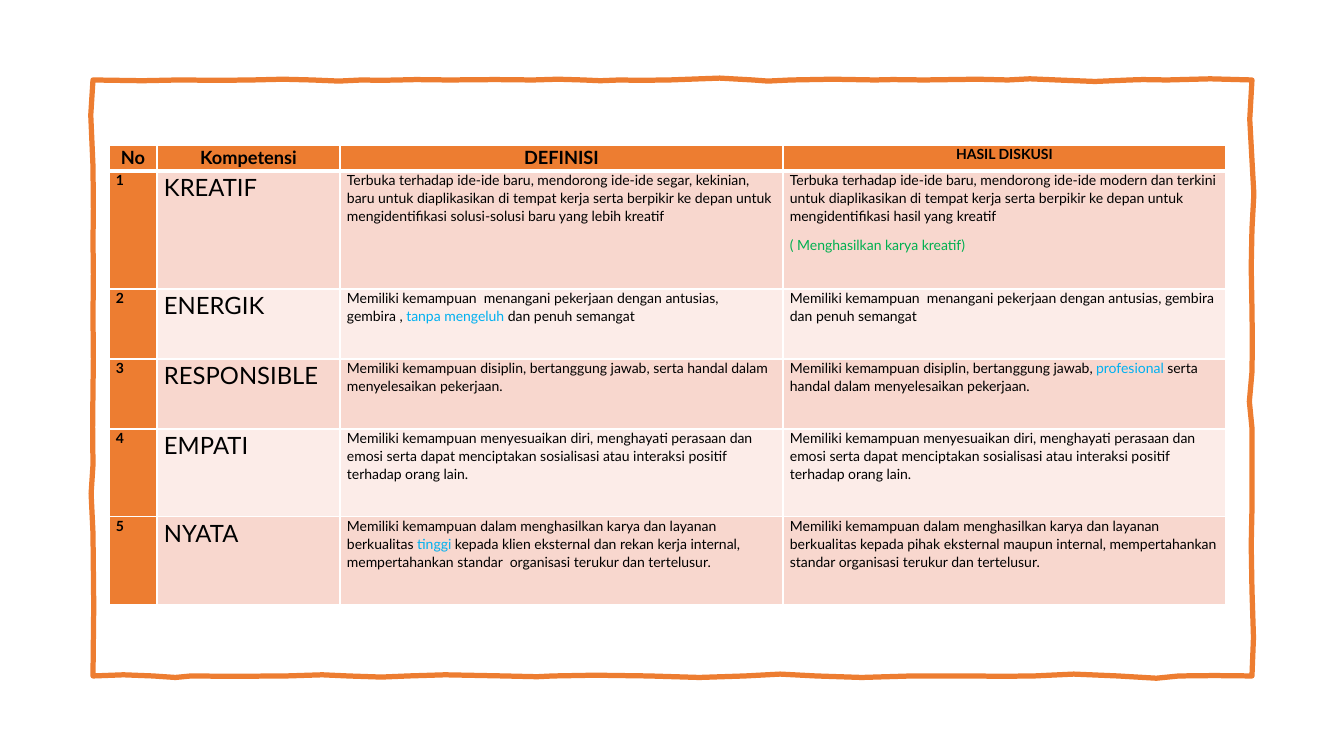
from lxml import etree
from pptx import Presentation
from pptx import util as u
from pptx.dml.color import RGBColor
from pptx.enum import text
from pptx.oxml.ns import qn

HEAD = ["No", "Kompetensi", "DEFINISI", "HASIL DISKUSI"]
EMPATHY = ("Memiliki kemampuan menyesuaikan diri, menghayati perasaan dan emosi serta dapat "
           "menciptakan sosialisasi atau interaksi positif terhadap orang lain.")
ROWS = [
    ("KREATIF",
     [[("Terbuka terhadap ide-ide baru, mendorong ide-ide segar, kekinian, baru untuk "
        "diaplikasikan di tempat kerja serta berpikir ke depan untuk mengidentifikasi "
        "solusi-solusi baru yang lebih kreatif", "ink")]],
     [[("Terbuka terhadap ide-ide baru, mendorong ide-ide modern dan terkini untuk "
        "diaplikasikan di tempat kerja serta berpikir ke depan untuk mengidentifikasi "
        "hasil yang kreatif", "ink")],
      [("( Menghasilkan karya kreatif)", "green")]]),
    ("ENERGIK",
     [[("Memiliki kemampuan  menangani pekerjaan dengan antusias, gembira , ", "ink"),
       ("tanpa mengeluh ", "blue"), ("dan penuh semangat", "ink")]],
     [[("Memiliki kemampuan  menangani pekerjaan dengan antusias, gembira dan penuh "
        "semangat", "ink")]]),
    ("RESPONSIBLE",
     [[("Memiliki kemampuan disiplin, bertanggung jawab, serta handal dalam "
        "menyelesaikan pekerjaan.", "ink")]],
     [[("Memiliki kemampuan disiplin, bertanggung jawab, ", "ink"),
       ("profesional ", "blue"), ("serta handal dalam menyelesaikan pekerjaan.", "ink")]]),
    ("EMPATI", [[(EMPATHY, "ink")]], [[(EMPATHY, "ink")]]),
    ("NYATA",
     [[("Memiliki kemampuan dalam menghasilkan karya dan layanan berkualitas", "ink"),
       (" tinggi", "blue"),
       (" kepada klien eksternal dan rekan kerja internal, mempertahankan standar  "
        "organisasi terukur dan tertelusur.", "ink")]],
     [[("Memiliki kemampuan dalam menghasilkan karya dan layanan berkualitas kepada pihak "
        "eksternal maupun internal, mempertahankan standar organisasi terukur dan "
        "tertelusur.", "ink")]]),
]

THEME = {
    "font": "Lato", "ink": "000000", "green": "00B050", "blue": "00B0F0",
    "main": "ED7D31", "rule": "FFFFFF", "bands": ("F8D7CE", "FCECE8"),
    "head": 13, "name": 17, "body": 10, "frame": 3.75, "thin": 1, "thick": 3,
}
PX = 914400 / 100.8
PAGE = (1344, 756)
SPOT = (109, 145)
COLS = (48, 183, 443, 443)
TALL = (26, 118, 70, 70, 88, 88)
PAD = 7
STEPS = 2

LEFT, TOP, RIGHT, BASE = 93, 80, 1252, 676
BOTTOM_WAVES = [
    (118, -1, 129, -2, 153), (177, 2, 176, 2, 191), (206, -1, 251, 2, 286),
    (322, -2, 326, -1, 348), (370, 1, 395, 2, 408), (421, -2, 462, -1, 504),
    (546, 1, 534, 1, 553), (572, 0, 614, -2, 649), (683, 2, 717, 2, 745),
    (772, -2, 788, -3, 816), (846, 3, 876, 1, 912), (950, -1, 958, 1, 974),
    (990, -1, 1006, 2, 1034), (1062, -2, 1084, -3, 1118), (1152, 3, 1166, 3, 1179),
    (1192, -2, 1236, 1, RIGHT)]
RIGHT_WAVES = [
    (655, 1, 623, 3, 590), (557, -4, 530, 2, 509), (488, -3, 446, 3, 428),
    (412, -4, 392, -3, 372), (352, 2, 335, -1, 309), (284, 0, 249, -2, 229),
    (209, 2, 179, 3, 160), (140, -4, 98, -2, TOP)]
TOP_WAVES = [
    (1222, -3, 1199, 0, 1167), (1137, 0, 1145, -1, 1130), (1114, 1, 1077, 3, 1057),
    (1038, -4, 1020, 1, 1008), (997, -1, 965, -1, 924), (884, -1, 897, 0, 875),
    (852, 0, 813, -2, 791), (768, 2, 765, 1, 753), (741, -2, 704, -3, 669),
    (634, 2, 639, -1, 620), (600, 1, 600, 1, 583), (564, -1, 552, -1, 533),
    (513, 1, 480, -2, 449), (417, 1, 410, -2, 399), (389, 2, 371, -1, 362),
    (354, 1, 325, 2, 312), (300, -2, 266, 0, 252), (238, -1, 202, 2, 179),
    (157, -2, 132, 4, LEFT)]
LEFT_WAVES = [
    (101, -3, 124, -3, 166), (208, 3, 214, -2, 241), (267, 1, 278, 0, 316),
    (352, 0, 370, 1, 390), (410, -2, 444, 1, 465), (484, -2, 500, -3, 533),
    (567, 2, 646, 0, BASE)]
SIDES = [(BASE, LEFT, True, BOTTOM_WAVES), (RIGHT, BASE, False, RIGHT_WAVES),
         (TOP, RIGHT, True, TOP_WAVES), (LEFT, TOP, False, LEFT_WAVES)]


def emu(px):
    return round(px * PX)


def rgb(name):
    return RGBColor.from_string(THEME.get(name, name))


def trace():
    for line, at, flat, waves in SIDES:
        for a, p, b, q, end in waves:
            for step in range(1, STEPS + 1):
                t = step / STEPS
                s = 1 - t
                along = s**3 * at + 3 * s * s * t * a + 3 * s * t * t * b + t**3 * end
                off = line + 3 * s * s * t * p + 3 * s * t * t * q
                yield (emu(along), emu(off)) if flat else (emu(off), emu(along))
            at = end


def draw_frame(slide):
    pen = slide.shapes.build_freeform(emu(LEFT), emu(BASE))
    pen.add_line_segments(list(trace())[:-1], close=True)
    frame = pen.convert_to_shape()
    frame.shadow.inherit = False
    frame.fill.background()
    frame.line.color.rgb = rgb("main")
    frame.line.width = u.Pt(THEME["frame"])


def rule(cell, base):
    props = cell._tc.get_or_add_tcPr()
    widths = {"a:lnL": "thin", "a:lnR": "thin", "a:lnT": "thin", "a:lnB": base}
    for spot, (tag, width) in enumerate(widths.items()):
        line = etree.Element(qn(tag), w=str(u.Pt(THEME[width])))
        fill = etree.SubElement(line, qn("a:solidFill"))
        etree.SubElement(fill, qn("a:srgbClr"), val=THEME["rule"])
        props.insert(spot, line)


def fill_cell(cell, paras, size, bold, back, base="thin", align=text.PP_ALIGN.LEFT):
    cell.margin_left = cell.margin_right = emu(PAD)
    cell.margin_top = cell.margin_bottom = 0
    cell.fill.solid()
    cell.fill.fore_color.rgb = rgb(back)
    rule(cell, base)
    frame = cell.text_frame
    for i, runs in enumerate(paras):
        para = frame.add_paragraph() if i else frame.paragraphs[0]
        para.alignment = align
        para.line_spacing = 1.07
        para.space_after = u.Pt(8)
        for words, tint in runs:
            run = para.add_run()
            run.text = words
            run.font.name = THEME["font"]
            run.font.size = u.Pt(THEME[size])
            run.font.bold = bold
            run.font.color.rgb = rgb(tint)


def draw_table(slide):
    x, y = SPOT
    table = slide.shapes.add_table(len(TALL), len(COLS), emu(x), emu(y),
                                   emu(sum(COLS)), emu(sum(TALL))).table
    table.horz_banding = False
    for col, wide in zip(table.columns, COLS):
        col.width = emu(wide)
    for row, high in zip(table.rows, TALL):
        row.height = emu(high)
    for c, title in enumerate(HEAD):
        size = "body" if c == len(HEAD) - 1 else "head"
        fill_cell(table.cell(0, c), [[(title, "ink")]], size, True, "main",
                  "thick", text.PP_ALIGN.CENTER)
    for r, (name, sense, result) in enumerate(ROWS, 1):
        band = THEME["bands"][(r - 1) % 2]
        fill_cell(table.cell(r, 0), [[(str(r), "ink")]], "body", True, "main")
        fill_cell(table.cell(r, 1), [[(name, "ink")]], "name", False, band)
        fill_cell(table.cell(r, 2), sense, "body", False, band)
        fill_cell(table.cell(r, 3), result, "body", False, band)


def main():
    deck = Presentation()
    deck.slide_width, deck.slide_height = map(emu, PAGE)
    slide = deck.slides.add_slide(deck.slide_layouts[6])
    draw_frame(slide)
    draw_table(slide)
    deck.save("out.pptx")


if __name__ == "__main__":
    main()
